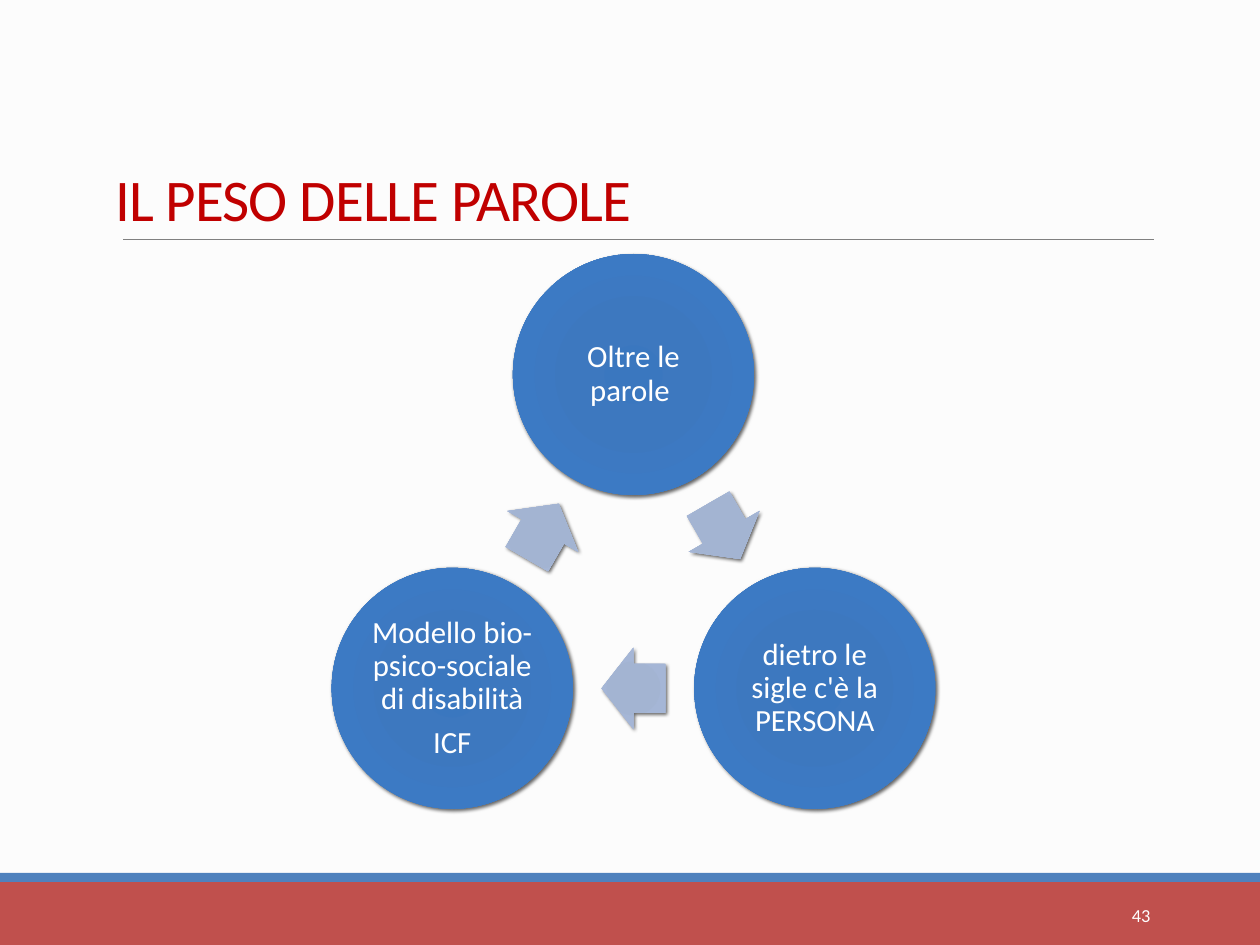
from math import cos, radians, sin

from lxml.etree import SubElement
from pptx import Presentation
from pptx.dml.color import RGBColor
from pptx.enum.shapes import MSO_CONNECTOR, MSO_SHAPE as Shape
from pptx.enum.text import MSO_ANCHOR as Anchor, PP_ALIGN as Align
from pptx.oxml.ns import qn
from pptx.util import Cm, Pt

WIDTH, HEIGHT = 36.12, 27.1
CYCLE_X, CYCLE_Y, CYCLE_RADIUS = 18.16, 16.74, 6
CIRCLE_SIZE = 6.91
ARROW_WIDTH, ARROW_HEIGHT = 1.83, 2.34
STOP_PLACES = (0, 34, 70, 100)
CIRCLE_COLORS = ("3A77BF", "3D78BF", "3C7AC4", "4A80C3")
ARROW_COLORS = ("A1B2D1", "A3B4D2", "A5B6D6", "B1C0DD")
STEPS = (
    ["Oltre le parole "],
    ["dietro le sigle c'è la PERSONA"],
    ["Modello bio-psico-sociale di disabilità", "ICF"],
)


def color(hex_code):
    return RGBColor.from_string(hex_code)


def add_xml(parent, tag, **attributes):
    return SubElement(parent, qn(tag), {k: str(v) for k, v in attributes.items()})


def on_cycle(angle, radius):
    """Point on the cycle, with the angle clockwise from the top."""
    turn = radians(angle)
    return CYCLE_X + radius * sin(turn), CYCLE_Y - radius * cos(turn)


class Page:
    font = "Calibri"

    def __init__(self, deck, background):
        self.slide = deck.slides.add_slide(deck.slide_layouts[6])
        self.shapes = self.slide.shapes
        fill = self.slide.background.fill
        fill.solid()
        fill.fore_color.rgb = color(background)

    def fill_text(self, frame, lines, size, ink, align, anchor, spacing=1.0, after=0):
        frame.word_wrap = True
        frame.vertical_anchor = anchor
        for index, line in enumerate(lines):
            para = frame.paragraphs[0] if index == 0 else frame.add_paragraph()
            para.text = line
            para.alignment = align
            para.line_spacing = spacing
            para.space_after = Pt(after)
            para.font.name = self.font
            para.font.size = Pt(size)
            para.font.color.rgb = color(ink)

    def text(self, left, top, width, height, line, *style, **spacing):
        box = self.shapes.add_textbox(Cm(left), Cm(top), Cm(width), Cm(height))
        self.fill_text(box.text_frame, [line], *style, **spacing)
        return box

    def bar(self, top, height, fill):
        bar = self.shapes.add_shape(Shape.RECTANGLE, 0, Cm(top), Cm(WIDTH), Cm(height))
        bar.shadow.inherit = False
        bar.fill.solid()
        bar.fill.fore_color.rgb = color(fill)
        bar.line.fill.background()

    def rule(self, left, right, top, ink):
        line = self.shapes.add_connector(
            MSO_CONNECTOR.STRAIGHT, Cm(left), Cm(top), Cm(right), Cm(top))
        line.line.color.rgb = color(ink)
        line.line.width = Pt(0.5)
        add_xml(line._element.spPr, "a:effectLst")

    def raised(self, kind, center, width, height, colors):
        """Shape with a radial gradient and a soft shadow, placed by its centre."""
        x, y = center
        shape = self.shapes.add_shape(
            kind, Cm(x - width / 2), Cm(y - height / 2), Cm(width), Cm(height))
        properties = shape._element.spPr
        gradient = add_xml(properties, "a:gradFill", rotWithShape=1)
        stops = add_xml(gradient, "a:gsLst")
        for place, hex_code in zip(STOP_PLACES, colors):
            stop = add_xml(stops, "a:gs", pos=place * 1000)
            add_xml(stop, "a:srgbClr", val=hex_code)
        radial = add_xml(gradient, "a:path", path="circle")
        add_xml(radial, "a:fillToRect", l=100000, t=100000, r=100000, b=100000)
        shape.line.fill.background()
        effects = add_xml(properties, "a:effectLst")
        shadow = add_xml(effects, "a:outerShdw", blurRad=Pt(3), dist=Pt(2),
                         dir=45 * 60000, algn="tl", rotWithShape=0)
        add_xml(add_xml(shadow, "a:srgbClr", val="000000"), "a:alpha", val=60000)
        return shape

    def circle(self, center, lines):
        circle = self.raised(Shape.OVAL, center, CIRCLE_SIZE, CIRCLE_SIZE, CIRCLE_COLORS)
        frame = circle.text_frame
        frame.margin_left = frame.margin_right = Cm(0.08)
        frame.margin_top = frame.margin_bottom = Cm(0.08)
        self.fill_text(frame, lines, 25, "FFFFFF", Align.CENTER, Anchor.MIDDLE,
                       spacing=0.9, after=8.75)

    def arrow(self, center, rotation):
        arrow = self.raised(Shape.RIGHT_ARROW, center, ARROW_WIDTH, ARROW_HEIGHT, ARROW_COLORS)
        arrow.adjustments[0] = 0.6
        arrow.adjustments[1] = 0.5
        arrow.rotation = rotation


def main():
    deck = Presentation()
    deck.slide_width, deck.slide_height = Cm(WIDTH), Cm(HEIGHT)
    page = Page(deck, "FCFCFC")

    page.bar(25.29, 1.81, "C0504D")
    page.bar(25.03, 0.26, "4F81BD")
    page.rule(3.53, 33.07, 6.86, "808080")
    title = page.text(3.05, 1.09, 29.79, 5.74, "IL PESO DELLE PAROLE", 48, "C00000",
                      Align.LEFT, Anchor.BOTTOM, spacing=0.85)
    span = title.text_frame.paragraphs[0].runs[0]
    span.font._element.set("spc", "-70")

    turn = 360 / len(STEPS)
    for index, lines in enumerate(STEPS):
        angle = index * turn
        page.circle(on_cycle(angle, CYCLE_RADIUS), lines)
        halfway = angle + turn / 2
        page.arrow(on_cycle(halfway, CYCLE_RADIUS * cos(radians(turn / 2))), halfway)

    page.text(29.34, 25.53, 3.89, 1.45, "43", 14.9, "FFFFFF", Align.RIGHT, Anchor.MIDDLE)
    deck.save("out.pptx")


if __name__ == "__main__":
    main()
